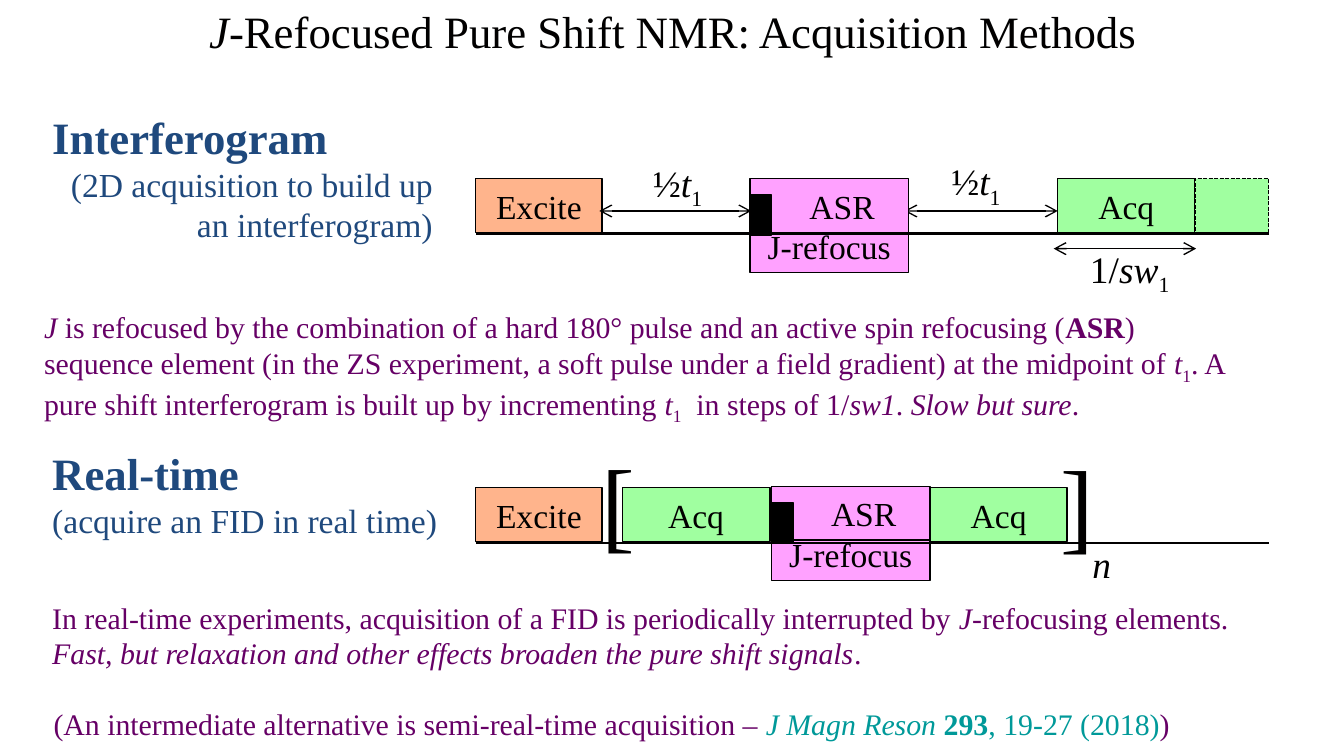
from dataclasses import dataclass
from typing import NamedTuple, Optional

from lxml.etree import SubElement
from pptx import Presentation
from pptx.dml.color import RGBColor
from pptx.enum.dml import MSO_LINE
from pptx.enum.shapes import MSO_CONNECTOR, MSO_SHAPE
from pptx.enum.text import MSO_ANCHOR as Anchor, PP_ALIGN as Align
from pptx.oxml.ns import qn
from pptx.util import Emu, Inches, Pt

COLUMNS, ROWS = 100, 56.25
FONT = "Times New Roman"
COLORS = {
    "black": "000000", "ink": "010000", "excite": "FFB48C", "acquire": "A0FFA0",
    "refocus": "FFA1FF", "heading": "1F497D", "body": "660066", "citation": "009999",
}

presentation = Presentation()
presentation.slide_width = Inches(10)
presentation.slide_height = presentation.slide_width * 9 // 16
slide = presentation.slides.add_slide(presentation.slide_layouts[6])


class Run(NamedTuple):
    text: str
    italic: bool = False
    bold: bool = False
    subscript: bool = False
    color: Optional[str] = None


class Area(NamedTuple):
    column: float
    row: float
    columns: float
    rows: float


@dataclass
class Line:
    runs: list
    size: float
    color: str = "ink"
    align: Align = Align.LEFT
    bold: bool = False
    spacing: float = 1.0


@dataclass
class Block:
    area: Area
    fill: str
    label: str = ""
    edge: str = "ink"
    dashed: bool = False
    indent: float = 0.1


def rgb(name: str) -> RGBColor:
    return RGBColor.from_string(COLORS[name])


def across(columns: float) -> Emu:
    return Emu(round(presentation.slide_width * columns / COLUMNS))


def down(rows: float) -> Emu:
    return Emu(round(presentation.slide_height * rows / ROWS))


def place(area: Area) -> tuple:
    return across(area.column), down(area.row), across(area.columns), down(area.rows)


def write(frame, lines: list) -> None:
    for index, line in enumerate(lines):
        paragraph = frame.add_paragraph() if index else frame.paragraphs[0]
        paragraph.alignment = line.align
        paragraph.line_spacing = line.spacing
        paragraph.font.name = FONT
        paragraph.font.size = Pt(line.size)
        paragraph.font.bold = line.bold
        paragraph.font.color.rgb = rgb(line.color)
        for part in line.runs:
            run = paragraph.add_run()
            run.text = part.text
            if part.italic:
                run.font.italic = True
            if part.bold:
                run.font.bold = True
            if part.color:
                run.font.color.rgb = rgb(part.color)
            if part.subscript:
                run._r.get_or_add_rPr().set("baseline", "-25000")


def draw_text(area: Area, lines: list, wrap: bool = True):
    frame = slide.shapes.add_textbox(*place(area)).text_frame
    frame.word_wrap = wrap
    write(frame, lines)
    return frame


def draw_block(block: Block) -> None:
    shape = slide.shapes.add_shape(MSO_SHAPE.RECTANGLE, *place(block.area))
    shape.shadow.inherit = False
    shape.fill.solid()
    shape.fill.fore_color.rgb = rgb(block.fill)
    shape.line.color.rgb = rgb(block.edge)
    shape.line.width = Pt(0.75)
    if block.dashed:
        shape.line.dash_style = MSO_LINE.SQUARE_DOT
    if block.label:
        shape.text_frame.margin_left = Inches(block.indent)
        shape.text_frame.vertical_anchor = Anchor.MIDDLE
        write(shape.text_frame, [Line([Run(block.label)], 18, align=Align.CENTER)])


def draw_line(start: float, end: float, row: float, width: float, arrows: bool = False) -> None:
    connector = slide.shapes.add_connector(
        MSO_CONNECTOR.STRAIGHT, across(start), down(row), across(end), down(row))
    connector.line.color.rgb = rgb("ink")
    connector.line.width = Pt(width)
    properties = connector._element.spPr
    if arrows:
        for tag in ("a:headEnd", "a:tailEnd"):
            SubElement(properties.find(qn("a:ln")), qn(tag), type="arrow")
    SubElement(properties, qn("a:effectLst"))


def draw_excite(row: float) -> None:
    draw_block(Block(Area(35.4, row, 9.4, 4), "excite", "Excite", "black"))


def draw_acquire(column: float, row: float, columns: float) -> None:
    draw_block(Block(Area(column, row, columns, 4), "acquire", "Acq"))


def draw_refocus(column: float, row: float) -> None:
    draw_block(Block(Area(column, row + 3, 11.8, 4), "refocus", "J-refocus", "black"))
    draw_block(Block(Area(column, row, 11.8, 4), "refocus", "ASR", "black", indent=0.29))
    draw_block(Block(Area(column, row + 1.2, 1.6, 3), "black"))


def draw_baseline(row: float) -> None:
    draw_line(35.4, 94.4, row, 1.5)


def draw_symbol(area: Area, runs: list, size: float = 20, align: Align = Align.LEFT) -> None:
    draw_text(area, [Line(runs, size, align=align)], wrap=False)


def draw_heading(area: Area, title: str, detail: str, align: Align = Align.LEFT) -> None:
    draw_text(area, [Line([Run(title)], 24, "heading", bold=True),
                     Line([Run(detail)], 18, "heading", align)])


def draw_body(area: Area, runs: list) -> None:
    draw_text(area, [Line(runs, 16, "body")])


T1 = [Run("t", italic=True), Run("1", subscript=True)]

title = draw_text(Area(4.2, 0.3, 91.7, 3.6), [Line(
    [Run("J", italic=True), Run("-Refocused Pure Shift NMR: Acquisition Methods")],
    24, align=Align.CENTER, spacing=1.1)])
title.vertical_anchor = Anchor.MIDDLE
title.margin_top = title.margin_bottom = 0
title.margin_left = title.margin_right = Inches(0.08)

draw_block(Block(Area(88.9, 13.3, 5.5, 4), "acquire", edge="black", dashed=True))
draw_excite(13.3)
draw_acquire(78.7, 13.3, 10.2)
for area in (Area(69.8, 11.3, 5.8, 4.4), Area(47.6, 11.4, 5.8, 4.4)):
    draw_symbol(area, [Run("½"), *T1])
for start, end, row in ((67.3, 78.7, 15.7), (44.6, 55.9, 15.7), (78.4, 89, 18.5)):
    draw_line(start, end, row, 0.75, arrows=True)
draw_symbol(Area(80, 17.8, 8.1, 4.4),
            [Run("1/"), Run("sw", italic=True), Run("1", subscript=True)], align=Align.CENTER)
draw_refocus(55.8, 13.3)
draw_baseline(17.4)
draw_heading(Area(2.9, 7.7, 30.3, 11.1), "Interferogram",
             " (2D acquisition to build up an interferogram)", Align.RIGHT)
draw_body(Area(2.3, 22.5, 90.5, 9.1), [
    Run("J", italic=True),
    Run(" is refocused by the combination of a hard 180° pulse and an active spin refocusing ("),
    Run("ASR", bold=True),
    Run(") sequence element (in the ZS experiment, a soft pulse under a field gradient)"
        " at the midpoint of "),
    *T1,
    Run(". A pure shift interferogram is built up by incrementing "),
    *T1,
    Run("  in steps of 1/"), Run("sw1", italic=True), Run(". "),
    Run("Slow but sure", italic=True), Run("."),
])

draw_heading(Area(2.9, 32.7, 31.5, 8.1), "Real-time", "(acquire an FID in real time)")
draw_excite(36.3)
draw_acquire(69.2, 36.3, 10.2)
draw_acquire(46.3, 36.3, 11)
draw_symbol(Area(43.7, 32.2, 4.5, 10.1), [Run("[")], 54, Align.RIGHT)
draw_symbol(Area(77.9, 32.3, 4.5, 10.1), [Run("]")], 54)
draw_symbol(Area(80.3, 39.8, 4.4, 4.4), [Run("n", italic=True)])
draw_refocus(57.4, 36.2)
draw_baseline(40.4)
draw_body(Area(2.9, 44.1, 90.5, 6.4), [
    Run("In real-time experiments, acquisition of a FID is periodically interrupted by "),
    Run("J", italic=True), Run("-refocusing elements. "),
    Run("Fast, but relaxation and other effects broaden the pure shift signals", italic=True),
    Run("."),
])
draw_body(Area(3, 52, 87.8, 3.7), [
    Run("(An intermediate alternative is semi-real-time acquisition – "),
    Run("J Magn Reson ", italic=True, color="citation"),
    Run("293", bold=True, color="citation"),
    Run(", 19-27 (2018)", color="citation"), Run(")"),
])

presentation.save("out.pptx")
